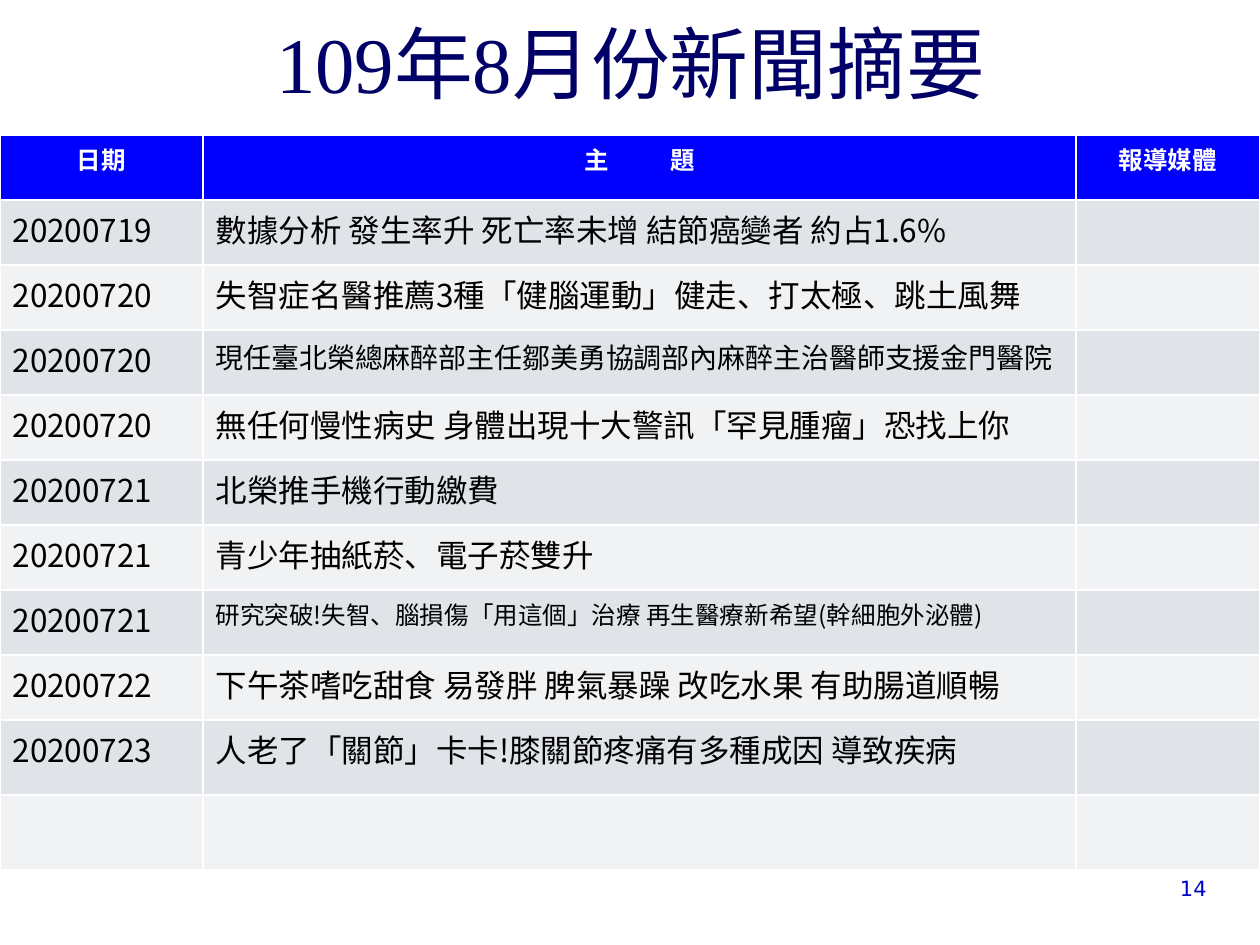
from lxml import etree
from pptx import Presentation
from pptx import util as u
from pptx.dml.color import RGBColor
from pptx.enum import text
from pptx.oxml.ns import qn

TITLE = "109年8月份新聞摘要"
PAGE = "14"
HEAD = ["日期", ("主 ", "題"), "報導媒體"]
# date, topic, topic size in points
NEWS = [
    ("20200719", "數據分析 發生率升 死亡率未增 結節癌變者 約占1.6%", 18),
    ("20200720", "失智症名醫推薦3種「健腦運動」健走、打太極、跳土風舞", 18),
    ("20200720", "現任臺北榮總麻醉部主任鄒美勇協調部內麻醉主治醫師支援金門醫院", 16),
    ("20200720", "無任何慢性病史 身體出現十大警訊「罕見腫瘤」恐找上你", 18),
    ("20200721", "北榮推手機行動繳費", 18),
    ("20200721", "青少年抽紙菸、電子菸雙升", 18),
    ("20200721", "研究突破!失智、腦損傷「用這個」治療 再生醫療新希望(幹細胞外泌體)", 14),
    ("20200722", "下午茶嗜吃甜食 易發胖 脾氣暴躁 改吃水果 有助腸道順暢", 18),
    ("20200723", "人老了「關節」卡卡!膝關節疼痛有多種成因 導致疾病", 18),
    ("", "", 18),
]
COLS = [203, 873, 184]
ROWS = [65] * 9 + [75] * 2
BANDS = ["E0E4E9", "F0F2F4"]
SANS = "Noto Sans CJK SC"
GAP = 1600  # letter spacing in the topic heading, 1/100 pt


def px(n):
    return u.Emu(round(n * 914400 / 126))


def rgb(code):
    return RGBColor.from_string(code)


def style(para, size, color, face, align, bold=False):
    font = para.font
    font.size, font.bold, font.name = u.Pt(size), bold, face
    font.color.rgb = rgb(color)
    para.alignment = align
    if face == SANS:
        props = para._p.pPr.find(qn("a:defRPr"))
        etree.SubElement(props, qn("a:ea")).set("typeface", face)


def paint(cell, color):
    cell.fill.solid()
    cell.fill.fore_color.rgb = rgb(color)


deck = Presentation()
deck.slide_width, deck.slide_height = px(1260), px(945)
slide = deck.slides.add_slide(deck.slide_layouts[5])
left, mid, right = (text.PP_ALIGN.LEFT, text.PP_ALIGN.CENTER,
                    text.PP_ALIGN.RIGHT)

# Title
title = slide.shapes.title
title.left, title.top, title.width, title.height = map(px, (79, 43, 1103, 73))
frame = title.text_frame
frame.text = TITLE
frame.auto_size = text.MSO_AUTO_SIZE.NONE
frame.vertical_anchor = text.MSO_ANCHOR.BOTTOM
style(frame.paragraphs[0], 45, "000066", "Times New Roman", mid)

# Table grid
table = slide.shapes.add_table(len(ROWS), len(COLS), 0, px(135),
                               px(sum(COLS)), px(sum(ROWS))).table
for col, wide in zip(table.columns, COLS):
    col.width = px(wide)
for row, high in zip(table.rows, ROWS):
    row.height = px(high)

# Header row
for cell, words in zip(table.rows[0].cells, HEAD):
    paint(cell, "0000FF")
    para = cell.text_frame.paragraphs[0]
    style(para, 14, "FFFFFF", SANS, mid, True)
    if isinstance(words, str):
        para.add_run().text = words
    else:
        for word in words:
            para.add_run().text = word
        para.runs[0].font._element.set("spc", str(GAP))

# News rows
for i, (date, topic, size) in enumerate(NEWS):
    cells = table.rows[i + 1].cells
    for cell, words, pt in zip(cells, (date, topic, ""), (18, size, 18)):
        paint(cell, BANDS[i % 2])
        cell.text = words
        style(cell.text_frame.paragraphs[0], pt, "000000", SANS, left)

# Page number
box = slide.shapes.add_textbox(*map(px, (1126, 869, 93, 38)))
box.text_frame.word_wrap = True
box.text_frame.text = PAGE
style(box.text_frame.paragraphs[0], 12, "0000CC", "DejaVu Sans", right)

deck.save("out.pptx")
